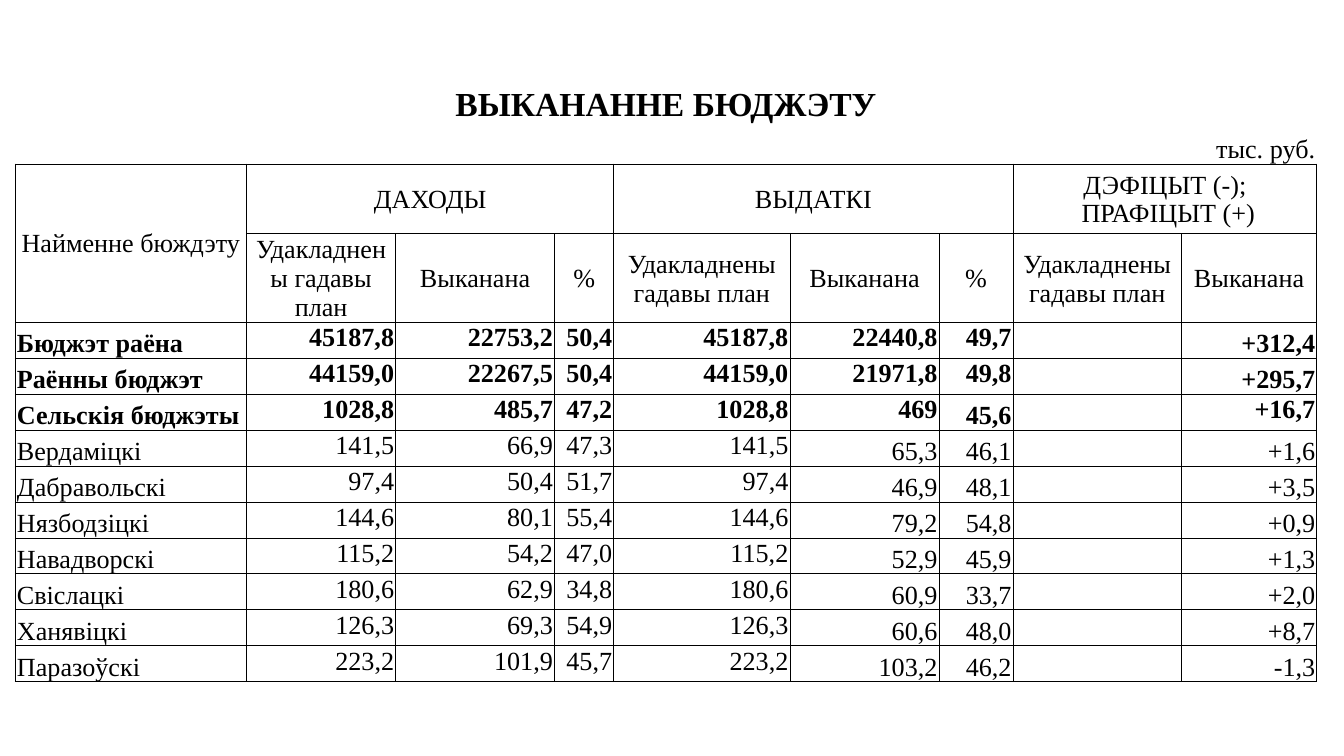
"""Build the budget execution slide as one ruled table."""
from lxml import etree
from pptx import Presentation, util as u
from pptx.dml import color
from pptx.enum import text
from pptx.oxml import ns

COLORS = {"ink": "000000"}
FONT = "Times New Roman"
PLAN = "Удакладнены гадавы план"
DONE = "Выканана"
TITLE_ROW, UNIT_ROW, GROUP_ROW, HEAD_ROW, FIRST_DATA_ROW = range(5)
BOLD_ROWS = (TITLE_ROW, 4, 5, 6)
WIDTHS = [4.37, 2.54, 0.28, 1.98, 1.02, 1.12, 3.33, 2.26, 0.56, 1.4, 3.18, 0.3, 2.26]
FIELDS = [(0, 1), (1, 2), (3, 2), (5, 1), (6, 1), (7, 2), (9, 1), (10, 1), (11, 2)]
BOTTOM_FROM = {0: 4, 7: 7, 9: 6, 11: 4}
BUDGETS = [
    ("Бюджэт раёна", "45187,8", "22753,2", "50,4", "45187,8", "22440,8", "49,7", "", "+312,4"),
    ("Раённы бюджэт", "44159,0", "22267,5", "50,4", "44159,0", "21971,8", "49,8", "", "+295,7"),
    ("Сельскія бюджэты", "1028,8", "485,7", "47,2", "1028,8", "469", "45,6", "", "+16,7"),
    ("Вердаміцкі", "141,5", "66,9", "47,3", "141,5", "65,3", "46,1", "", "+1,6"),
    ("Дабравольскі", "97,4", "50,4", "51,7", "97,4", "46,9", "48,1", "", "+3,5"),
    ("Нязбодзіцкі", "144,6", "80,1", "55,4", "144,6", "79,2", "54,8", "", "+0,9"),
    ("Навадворскі", "115,2", "54,2", "47,0", "115,2", "52,9", "45,9", "", "+1,3"),
    ("Свіслацкі", "180,6", "62,9", "34,8", "180,6", "60,9", "33,7", "", "+2,0"),
    ("Ханявіцкі", "126,3", "69,3", "54,9", "126,3", "60,6", "48,0", "", "+8,7"),
    ("Паразоўскі", "223,2", "101,9", "45,7", "223,2", "103,2", "46,2", "", "-1,3"),
]
HEIGHTS = [0.86, 0.69, 1.32, 1.6] + [0.68] * len(BUDGETS)

blocks = [
    (TITLE_ROW, 0, 1, 13, "ВЫКАНАННЕ БЮДЖЭТУ"),
    (UNIT_ROW, 2, 1, 2, ""),
    (UNIT_ROW, 4, 1, 2, ""),
    (UNIT_ROW, 8, 1, 2, ""),
    (UNIT_ROW, 10, 1, 2, ""),
    (UNIT_ROW, 12, 1, 1, "тыс. руб."),
    (GROUP_ROW, 0, 2, 1, "Найменне бюждэту"),
    (GROUP_ROW, 1, 1, 5, "ДАХОДЫ"),
    (GROUP_ROW, 6, 1, 4, "ВЫДАТКІ"),
    (GROUP_ROW, 10, 1, 3, "ДЭФІЦЫТ (-);\n ПРАФІЦЫТ (+)"),
]
headings = [PLAN, DONE, "%", PLAN, DONE, "%", PLAN, DONE]
for (col, span), heading in zip(FIELDS[1:], headings):
    blocks.append((HEAD_ROW, col, 1, span, heading))
for row, budget in enumerate(BUDGETS, FIRST_DATA_ROW):
    for (col, span), value in zip(FIELDS, budget):
        blocks.append((row, col, 1, span, value))


def add_border(cell, side, visible):
    line = etree.SubElement(cell._tc.get_or_add_tcPr(), ns.qn(f"a:ln{side}"), w=str(u.Pt(0.5)))
    fill = etree.SubElement(line, ns.qn("a:solidFill" if visible else "a:noFill"))
    if visible:
        etree.SubElement(fill, ns.qn("a:srgbClr"), val=COLORS["ink"])


deck = Presentation()
deck.slide_width, deck.slide_height = u.Cm(25.4), u.Cm(14.29)
page = deck.slides.add_slide(deck.slide_layouts[6])
frame = page.shapes.add_table(
    len(HEIGHTS), len(WIDTHS), u.Cm(0.29), u.Cm(1.55), u.Cm(sum(WIDTHS)), u.Cm(sum(HEIGHTS))
)
table = frame.table
table.first_row = table.horz_banding = False
for column, width in zip(table.columns, WIDTHS):
    column.width = u.Cm(width)
for band, height in zip(table.rows, HEIGHTS):
    band.height = u.Cm(height)

cell_format = {
    "margin_left": u.Cm(0.03),
    "margin_right": u.Cm(0.03),
    "margin_top": u.Cm(0.03),
    "margin_bottom": 0,
}
for row in range(len(HEIGHTS)):
    for col in range(len(WIDTHS)):
        cell = table.cell(row, col)
        for name, value in cell_format.items():
            setattr(cell, name, value)
        for side in "LRTB":
            add_border(cell, side, row >= GROUP_ROW or (row == UNIT_ROW and side == "B"))
        cell.fill.background()

for row, col, row_span, col_span, wording in blocks:
    cell = table.cell(row, col)
    if row_span * col_span > 1:
        cell.merge(table.cell(row + row_span - 1, col + col_span - 1))
    cell.text_frame.text = wording
    at_bottom = row == UNIT_ROW or (row >= BOTTOM_FROM.get(col, 99) and (row, col) != (6, 11))
    if row in (TITLE_ROW, GROUP_ROW, HEAD_ROW):
        anchor, align = text.MSO_ANCHOR.MIDDLE, text.PP_ALIGN.CENTER
    else:
        anchor = text.MSO_ANCHOR.BOTTOM if at_bottom else text.MSO_ANCHOR.TOP
        align = text.PP_ALIGN.LEFT if col == 0 else text.PP_ALIGN.RIGHT
    cell.vertical_anchor = anchor
    font_format = {
        "name": FONT,
        "size": u.Pt(18 if row == TITLE_ROW else 14),
        "bold": row in BOLD_ROWS,
    }
    for para in cell.text_frame.paragraphs:
        para.alignment = align
        for span in para.runs:
            for name, value in font_format.items():
                setattr(span.font, name, value)
            span.font.color.rgb = color.RGBColor.from_string(COLORS["ink"])

for cell in table.iter_cells():
    if not cell.text_frame.text:
        etree.SubElement(cell.text_frame.paragraphs[0]._p, ns.qn("a:endParaRPr"), sz="1400")

deck.save("out.pptx")
